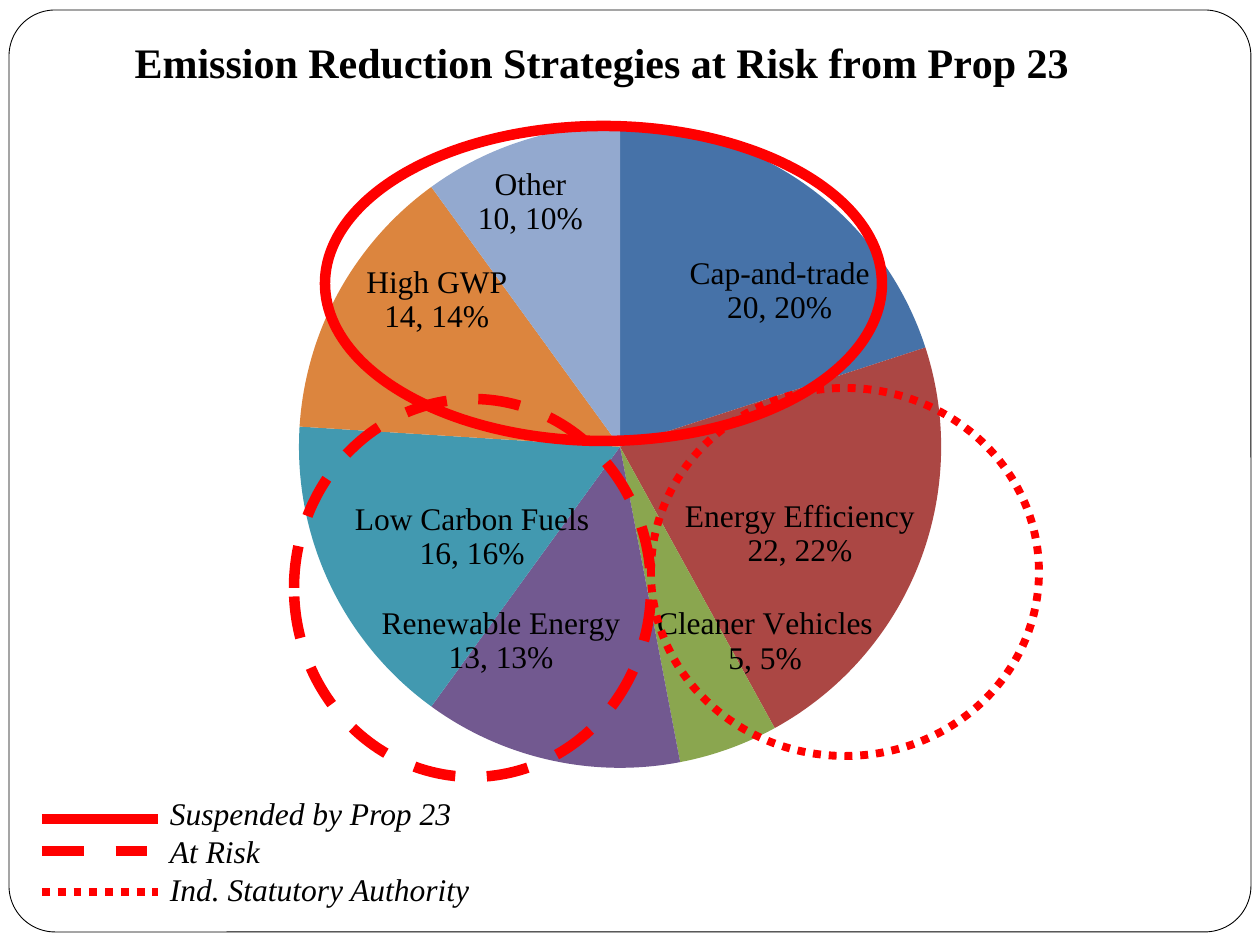
from math import cos, pi, sin

from lxml.etree import SubElement
from pptx import Presentation
from pptx.chart.data import CategoryChartData as ChartData
from pptx.dml.color import RGBColor
from pptx.enum.chart import XL_CHART_TYPE as Chart, XL_LABEL_POSITION as Pos
from pptx.enum.dml import MSO_LINE as Dash
from pptx.enum.shapes import MSO_CONNECTOR as Conn, MSO_SHAPE as Shape
from pptx.oxml import parse_xml
from pptx.oxml.ns import nsdecls, qn
from pptx.util import Inches, Pt

PX = Inches(1) / 126
BLACK, RED, WHITE = "000000", "FF0000", "FFFFFF"
TITLE = "Emission Reduction Strategies at Risk from Prop 23"
BOX = (-73, 0, 1333, 911)
PIE = (285, 126, 669, 642)

# category, value, label centre, colour
SLICES = [
    ("Cap-and-trade", 20, (779, 292), "4672A8"),
    ("Energy Efficiency", 22, (799, 534), "AB4744"),
    ("Cleaner Vehicles", 5, (765, 642), "8AA64F"),
    ("Renewable Energy", 13, (500, 641), "725990"),
    ("Low Carbon Fuels", 16, (471, 537), "4299B0"),
    ("High GWP", 14, (436, 300), "DC853E"),
    ("Other", 10, (530, 202), "93A9CF"),
]

# legend text, line width, dash, ellipse box, legend line (x1, x2, y)
GROUPS = [
    ("Suspended by Prop 23", 6, None, (325, 126, 557, 315), (42, 158, 819)),
    ("Ind. Statutory Authority", 4.5, Dash.ROUND_DOT, (651, 388, 388, 368),
     (42, 158, 892)),
    ("At Risk", 6, Dash.DASH, (294, 399, 357, 378), (42, 147, 851)),
]


def px(*nums):
    return [round(n * PX) for n in nums]


def rgb(text):
    return RGBColor.from_string(text)


def place(node, spot, x, y, size=None):
    """Give a chart part a manual layout, in fractions of the chart."""
    for old in node.findall(qn("c:layout")):
        node.remove(old)
    parts = [("x", x), ("y", y)]
    if size:
        parts = [("layoutTarget", "inner"), ("xMode", "edge"),
                 ("yMode", "edge")] + parts + list(zip("wh", size))
    elif node.tag == qn("c:title"):
        parts = [("xMode", "edge"), ("yMode", "edge")] + parts
    body = "".join(f'<c:{k} val="{v}"/>' for k, v in parts)
    node.insert(spot, parse_xml(
        f'<c:layout {nsdecls("c")}><c:manualLayout>{body}'
        '</c:manualLayout></c:layout>'))


class Page:
    """Holds the style and the current slide."""
    face = "Times New Roman"

    def __init__(self, slide):
        self.slide = slide
        self.shapes = slide.shapes

    def font(self, frame, size, bold=False, italic=False):
        for para in frame.paragraphs:
            for run in para.runs:
                font = run.font
                font.name, font.size = self.face, Pt(size)
                font.bold, font.italic = bold, italic
                font.color.rgb = rgb(BLACK)

    def pen(self, line, color, width, dash=None):
        line.color.rgb = rgb(color)
        line.width = Pt(width)
        if dash:
            line.dash_style = dash

    def frame(self, box):
        card = self.shapes.add_shape(Shape.ROUNDED_RECTANGLE, *px(*box))
        card.adjustments[0] = 0.05
        card.shadow.inherit = False
        card.fill.solid()
        card.fill.fore_color.rgb = rgb(WHITE)
        self.pen(card.line, BLACK, 0.5)

    def ring(self, box, width, dash):
        ring = self.shapes.add_shape(Shape.OVAL, *px(*box))
        ring.shadow.inherit = False
        ring.fill.background()
        self.pen(ring.line, RED, width, dash)

    def line(self, x1, x2, y, width, dash):
        line = self.shapes.add_connector(Conn.STRAIGHT, *px(x1, y, x2, y))
        SubElement(line._element.spPr, qn("a:effectLst"))
        self.pen(line.line, RED, width, dash)

    def text(self, box, lines, size):
        frame = self.shapes.add_textbox(*px(*box)).text_frame
        frame.word_wrap = True
        frame.margin_left = frame.margin_right = 0
        frame.text = "\n".join(lines)
        self.font(frame, size, italic=True)

    def pie(self, box, plot, title, slices):
        left, top, wide, high = box
        data = ChartData()
        data.categories = [row[0] for row in slices]
        data.add_series("Series 1", [row[1] for row in slices])
        chart = self.shapes.add_chart(Chart.PIE, *px(*box), data).chart
        chart.has_legend = False
        chart.font.name, chart.font.size = self.face, Pt(10)
        chart.font.color.rgb = rgb(BLACK)

        chart.has_title = True
        head = chart.chart_title
        head.text_frame.text = title
        self.font(head.text_frame, 24, bold=True)
        place(head._element, 1, 0.15, 0.03)

        x, y, w, h = plot
        place(chart._chartSpace.chart.plotArea, 0,
              round((x - left) / wide, 3), round((y - top) / high, 3),
              (round(w / wide, 3), round(h / high, 3)))

        series = chart.plots[0].series[0]
        total = sum(row[1] for row in slices)
        done = 0
        for i, (name, value, (cx, cy), color) in enumerate(slices):
            point = series.points[i]
            point.format.fill.solid()
            point.format.fill.fore_color.rgb = rgb(color)
            point.format.line.fill.background()
            label = point.data_label
            frame = label.text_frame
            frame.text = f"{name}\n{value}, {value / total:.0%}"
            self.font(frame, 18)
            label.position = Pos.CENTER
            # A label's offset counts from the middle of its slice.
            turn = 2 * pi * (done + value / 2) / total
            reach = min(w, h) / 4
            dx = cx - (x + w / 2 + reach * sin(turn))
            dy = cy - (y + h / 2 - reach * cos(turn))
            node = frame._txBody.getparent().getparent()
            place(node, 1, round(dx / wide, 3), round(dy / high, 3))
            done += value


def main():
    deck = Presentation()
    deck.slide_width, deck.slide_height = Inches(10), Inches(7.5)
    page = Page(deck.slides.add_slide(deck.slide_layouts[6]))
    page.frame((9, 10, 1242, 922))
    page.pie(BOX, PIE, TITLE, SLICES)
    for _, width, dash, box, _ in GROUPS:
        page.ring(box, width, dash)
    rows = sorted(GROUPS, key=lambda group: group[4][2])
    page.text((170, 788, 469, 127), [row[0] for row in rows], 18)
    for _, width, dash, _, ends in rows:
        page.line(*ends, width, dash)
    deck.save("out.pptx")


if __name__ == "__main__":
    main()
